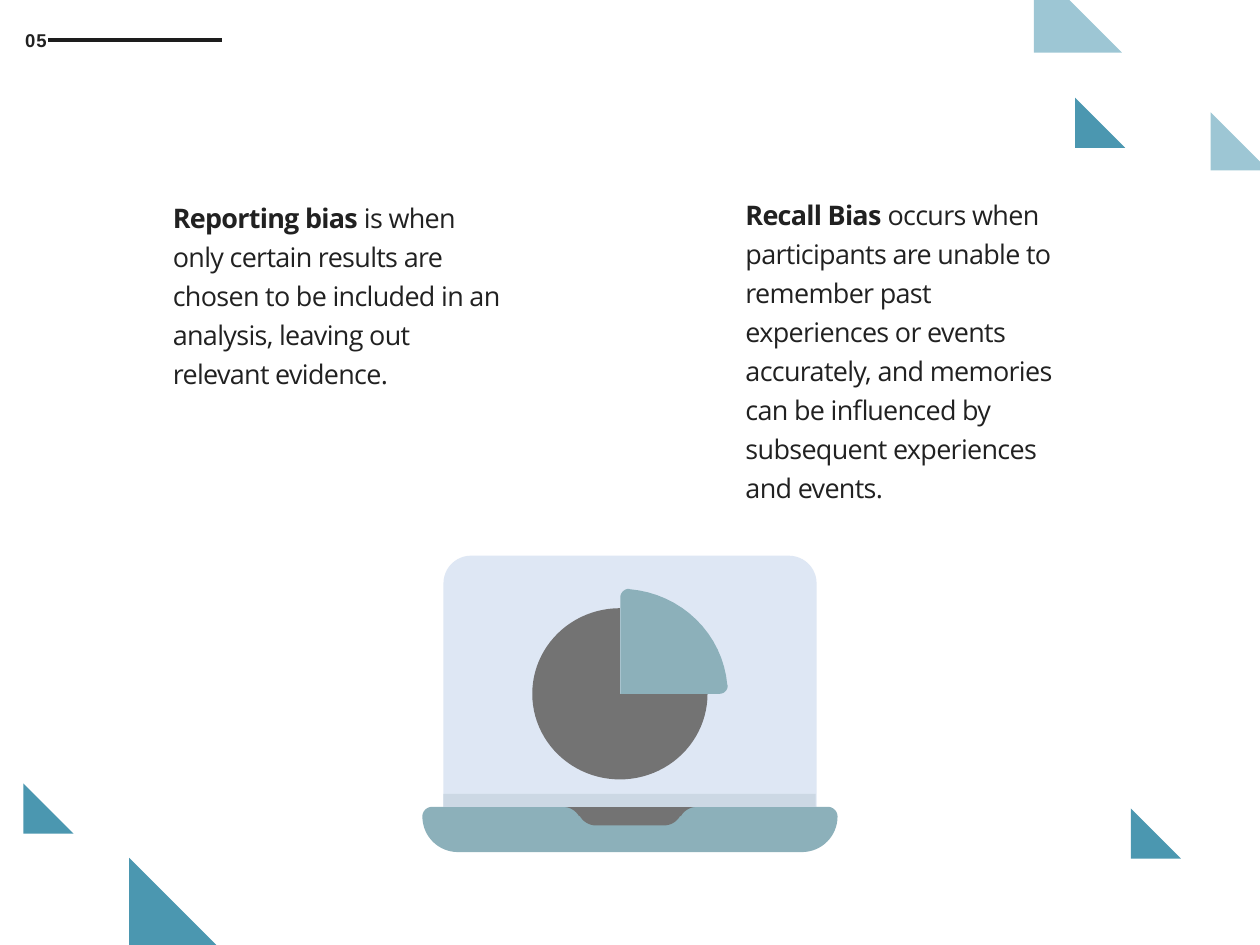
from math import cos, radians, sin

from lxml import etree
from pptx import Presentation
from pptx.dml.color import RGBColor
from pptx.enum.shapes import MSO_CONNECTOR, MSO_SHAPE
from pptx.enum.text import MSO_AUTO_SIZE
from pptx.oxml.ns import qn
from pptx.util import Inches, Pt

STRAIGHT = MSO_CONNECTOR.STRAIGHT
TRIANGLE = MSO_SHAPE.RIGHT_TRIANGLE
LID = MSO_SHAPE.ROUND_2_SAME_RECTANGLE
RECTANGLE = MSO_SHAPE.RECTANGLE
PIE = MSO_SHAPE.PIE
FIT_TEXT = MSO_AUTO_SIZE.SHAPE_TO_FIT_TEXT

SLIDE_SIZE = (15.6, 11.7)
BLUE, INK, RULE_INK = "4B97B0", "212121", "1D1D1D"
SCREEN, HINGE, TEAL, GREY = "DEE7F4", "CCD8E4", "8CB0BA", "737373"
PALE_OPACITY = 54
ARC_STEPS = 16

TRIANGLES = [
    (1.6, 10.62, 1.08),
    (13.31, 1.21, 0.62),
    (14, 10.01, 0.62),
    (0.29, 9.7, 0.62),
]
PALE_CORNERS = [
    [(12.8, 0), (13.24, 0), (13.89, 0.65), (12.8, 0.65)],
    [(14.99, 1.39), (15.6, 2), (15.6, 2.11), (14.99, 2.11)],
]
HEADER_RULE = (0.6, 0.5, 2.75, 0.5)
HEADER_RULE_WIDTH = 3.6

NUMBER_FORMAT = {"name": "Arial", "size": Pt(16.5), "bold": True}
TERM_FORMAT = {"name": "Open Sans", "size": Pt(24), "bold": True}
BODY_FORMAT = {"name": "Open Sans", "size": Pt(24), "bold": False}
NUMBER_PARAGRAPH = {"space_before": Pt(1.1)}
BODY_PARAGRAPH = {"space_before": Pt(0.9), "line_spacing": 1.21}
TEXTS = [
    ((0.3, 0.35, 0.32, 0.29), NUMBER_PARAGRAPH, [("05", NUMBER_FORMAT, 1.1)]),
    ((2.13, 2.4, 4.15, 1.93), BODY_PARAGRAPH, [
        ("Reporting bias ", TERM_FORMAT, -0.65),
        ("is when only certain results are chosen to be included in an "
         "analysis, leaving out relevant evidence.", BODY_FORMAT, -0.6),
    ]),
    ((9.22, 2.36, 4.15, 3.4), BODY_PARAGRAPH, [
        ("Recall Bias ", TERM_FORMAT, -0.65),
        ("occurs when participants are unable to remember past experiences "
         "or events accurately, and memories can be influenced by "
         "subsequent experiences and events.", BODY_FORMAT, -0.6),
    ]),
]

LID_BOX, LID_ROUNDING = (5.49, 6.88, 4.62, 3.11), 0.11
HINGE_BOX = (5.49, 9.83, 4.61, 0.16)
PIE_BOX = (6.59, 7.53, 2.17, 2.12)
BASE_ARCS = [
    (5.35, 10.11, 0.12, 0.12, 180, 270),
    (10.25, 10.11, 0.12, 0.12, 270, 360),
    (9.93, 10.11, 0.44, 0.44, 0, 90),
    (5.67, 10.11, 0.44, 0.44, 90, 180),
]
NOTCH_ARCS = [
    (6.97, 10.22, 0.23, 0.23, 270, 330),
    (7.38, 9.99, 0.23, 0.23, 150, 90),
    (8.22, 9.99, 0.23, 0.23, 90, 30),
    (8.63, 10.22, 0.23, 0.23, 210, 270),
]
SLICE_CENTRE = (7.68, 8.59)
SLICE_ARCS = [
    (7.79, 7.4, 0.11, 0.11, 180, 270),
    (*SLICE_CENTRE, 1.33, 1.3, 275, 355),
    (8.91, 8.49, 0.1, 0.1, 0, 90),
]


def color(hex_value):
    """Turn a hex string into a colour."""
    return RGBColor.from_string(hex_value)


def apply_format(target, values):
    """Set each attribute named in the dict."""
    for name, value in values.items():
        setattr(target, name, value)


def paint(shape, hex_value, opacity=100):
    """Give a shape a flat fill without outline or shadow."""
    shape.shadow.inherit = False
    shape.line.fill.background()
    shape.fill.solid()
    shape.fill.fore_color.rgb = color(hex_value)
    if opacity < 100:
        tint = shape._element.spPr.find(qn("a:solidFill"))[0]
        etree.SubElement(tint, qn("a:alpha")).set("val", str(opacity * 1000))


def add_preset(shapes, kind, box, hex_value):
    """Add a painted preset shape."""
    shape = shapes.add_shape(kind, *map(Inches, box))
    paint(shape, hex_value)
    return shape


def add_outline(shapes, points, hex_value, opacity=100):
    """Add a painted closed outline through the points."""
    corners = [(Inches(x), Inches(y)) for x, y in points]
    builder = shapes.build_freeform(*corners[0])
    builder.add_line_segments(corners[1:], close=True)
    paint(builder.convert_to_shape(), hex_value, opacity)


def trace(arcs):
    """List points along elliptical arcs, joined in order."""
    points = []
    for x, y, radius_x, radius_y, start, end in arcs:
        for step in range(ARC_STEPS + 1):
            angle = radians(start + (end - start) * step / ARC_STEPS)
            points.append((x + radius_x * cos(angle), y + radius_y * sin(angle)))
    return points


def add_text(slide, box, paragraph_format, runs):
    """Add a wrapped text box holding one paragraph of runs."""
    frame = slide.shapes.add_textbox(*map(Inches, box)).text_frame
    apply_format(frame, {
        "word_wrap": True, "auto_size": FIT_TEXT,
        "margin_left": Inches(0.01), "margin_top": Inches(0.01),
        "margin_right": 0, "margin_bottom": 0,
    })
    paragraph = frame.paragraphs[0]
    apply_format(paragraph, paragraph_format)
    for text, font_format, spacing in runs:
        run = paragraph.add_run()
        run.text = text
        apply_format(run.font, font_format)
        run.font.color.rgb = color(INK)
        run._r.get_or_add_rPr().set("spc", str(round(spacing * 100)))


def add_header_rule(slide):
    """Draw the line beside the page number."""
    rule = slide.shapes.add_connector(STRAIGHT, *map(Inches, HEADER_RULE))
    rule.line.color.rgb = color(RULE_INK)
    rule.line.width = Pt(HEADER_RULE_WIDTH)
    etree.SubElement(rule._element.spPr, qn("a:effectLst"))


def add_laptop(slide):
    """Draw the laptop with a pie on its screen as one group."""
    shapes = slide.shapes.add_group_shape().shapes
    lid = add_preset(shapes, LID, LID_BOX, SCREEN)
    lid.adjustments[0] = LID_ROUNDING
    add_outline(shapes, trace(BASE_ARCS), TEAL)
    add_outline(shapes, trace(NOTCH_ARCS), GREY)
    add_preset(shapes, RECTANGLE, HINGE_BOX, HINGE)
    add_preset(shapes, PIE, PIE_BOX, GREY)
    add_outline(shapes, trace(SLICE_ARCS) + [SLICE_CENTRE], TEAL)


def main():
    """Build and save the slide."""
    presentation = Presentation()
    presentation.slide_width, presentation.slide_height = map(Inches, SLIDE_SIZE)
    slide = presentation.slides.add_slide(presentation.slide_layouts[6])
    for left, top, side in TRIANGLES:
        add_preset(slide.shapes, TRIANGLE, (left, top, side, side), BLUE)
    for points in PALE_CORNERS:
        add_outline(slide.shapes, points, BLUE, PALE_OPACITY)
    add_header_rule(slide)
    for box, paragraph_format, runs in TEXTS:
        add_text(slide, box, paragraph_format, runs)
    add_laptop(slide)
    presentation.save("out.pptx")


if __name__ == "__main__":
    main()
